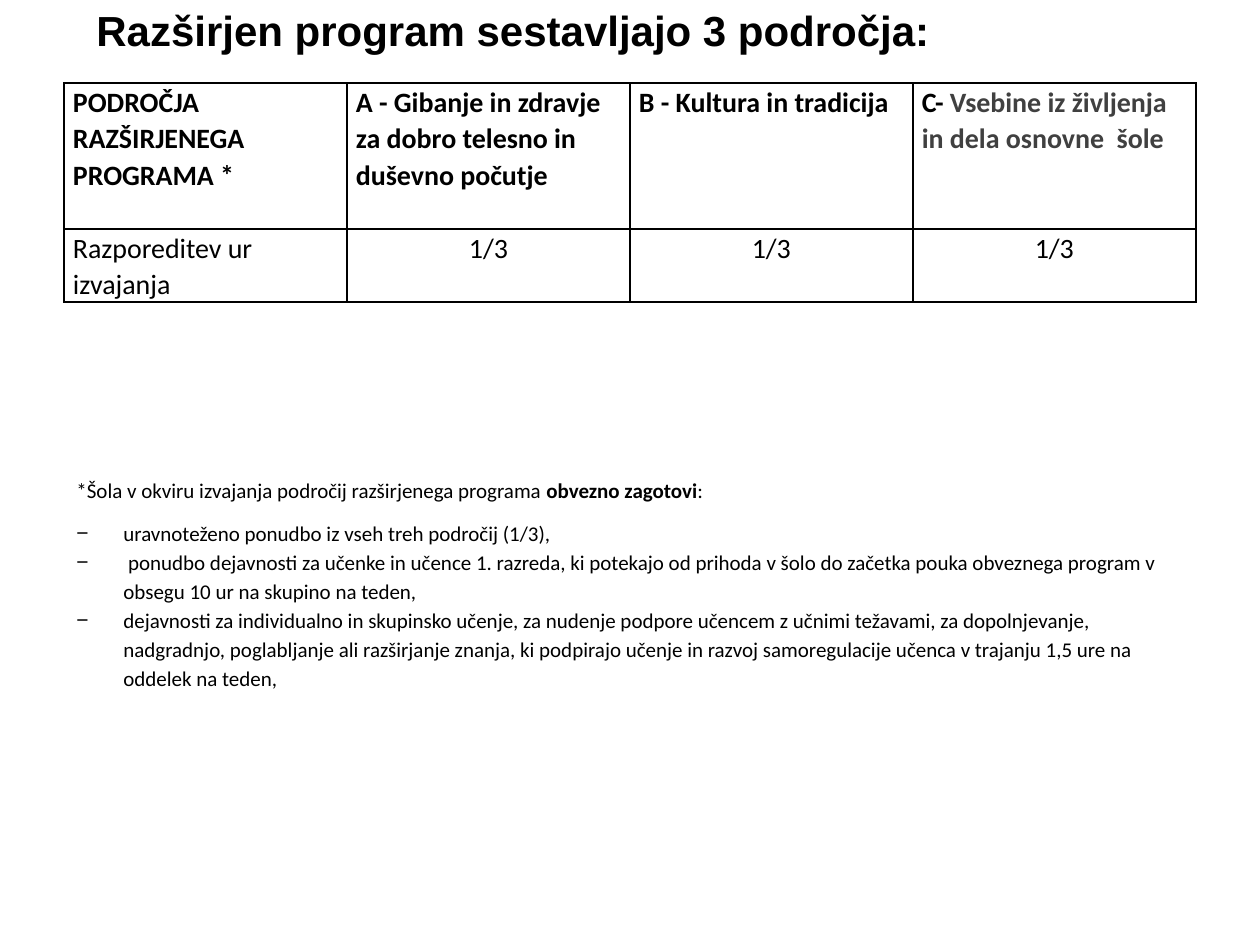
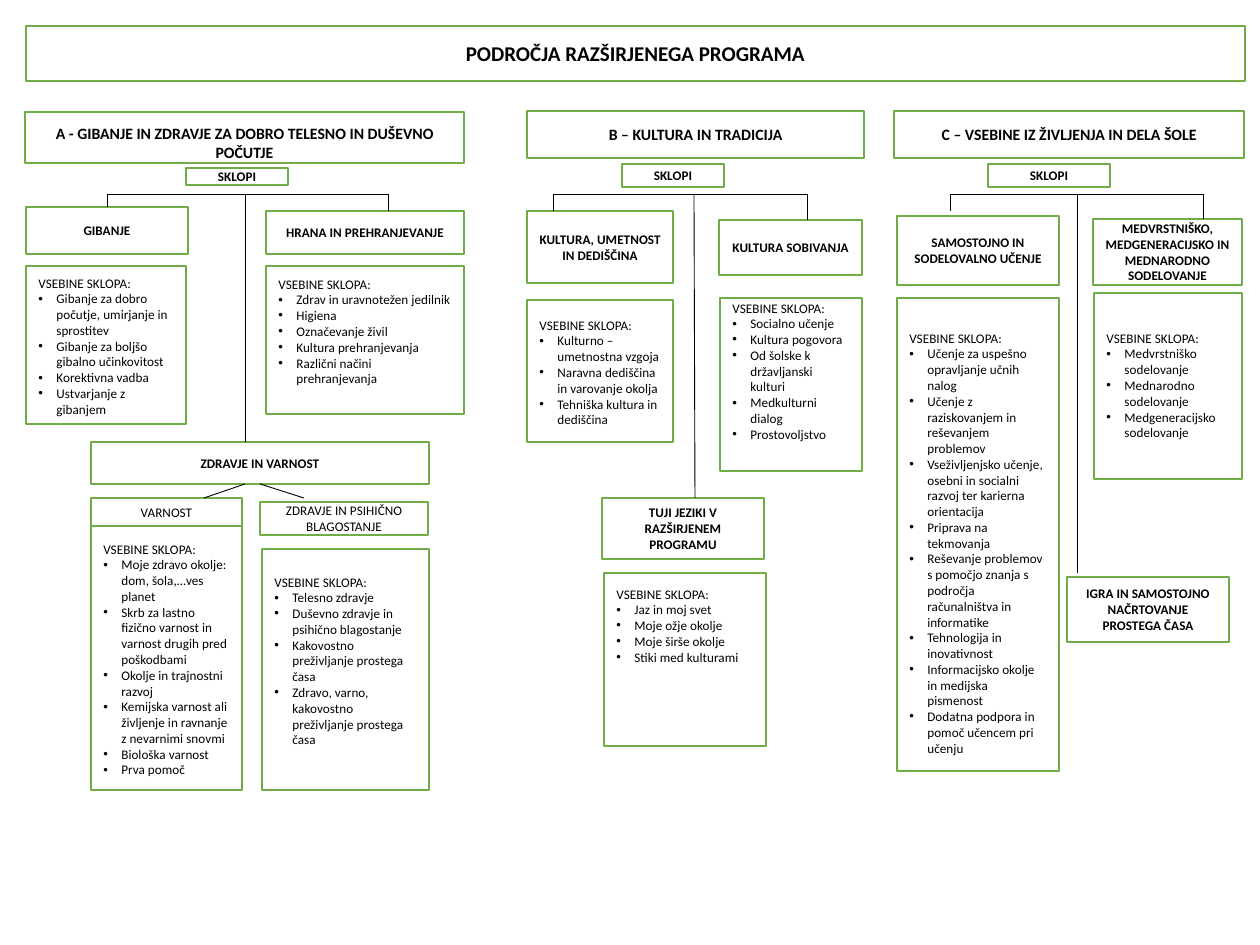
"""Builds two slides on the areas of the extended school programme."""
from lxml import etree
from pptx import Presentation
from pptx.dml.color import RGBColor
from pptx.enum.shapes import MSO_CONNECTOR, MSO_SHAPE
from pptx.enum.text import MSO_ANCHOR, PP_ALIGN
from pptx.oxml.ns import qn
from pptx.util import Emu, Pt

BLACK = RGBColor(0x00, 0x00, 0x00)
GREY = RGBColor(0x40, 0x40, 0x40)
WHITE = RGBColor(0xFF, 0xFF, 0xFF)
GREEN = RGBColor(0x70, 0xAD, 0x47)
PROCESS = MSO_SHAPE.FLOWCHART_PROCESS
STRAIGHT = MSO_CONNECTOR.STRAIGHT
CENTER, LEFT = PP_ALIGN.CENTER, PP_ALIGN.LEFT
MIDDLE, TOP = MSO_ANCHOR.MIDDLE, MSO_ANCHOR.TOP
TOP_SIDE, BOTTOM_SIDE = 0, 2
BODY_FONT, TITLE_FONT = "Calibri", "Arial"
SMALL = 7.5

TITLE = "Razširjen program sestavljajo 3 področja:"
TABLE_HEAD = [
    [("PODROČJA RAZŠIRJENEGA PROGRAMA *", True, BLACK)],
    [("A - Gibanje in zdravje za dobro telesno in duševno počutje", True, BLACK)],
    [("B - Kultura in tradicija", True, BLACK)],
    [("C- ", True, BLACK), ("Vsebine iz življenja in dela osnovne  šole", True, GREY)],
]
TABLE_SHARES = [[(text, False, BLACK)] for text in
                ("Razporeditev ur izvajanja", "1/3", "1/3", "1/3")]
TABLE_ROWS = [(146, TABLE_HEAD), (73, TABLE_SHARES)]
COLUMN_WIDTH = 283

DUTY_INTRO = [
    ("*Šola v okviru izvajanja področij razširjenega programa ", False, BLACK),
    ("obvezno zagotovi", True, BLACK),
    (":", False, BLACK),
]
DUTIES = [
    "uravnoteženo ponudbo iz vseh treh področij (1/3),",
    " ponudbo dejavnosti za učenke in učence 1. razreda, ki potekajo od prihoda v šolo "
    "do začetka pouka obveznega program v obsegu 10 ur na skupino na teden,",
    "dejavnosti za individualno in skupinsko učenje, za nudenje podpore učencem z učnimi "
    "težavami, za dopolnjevanje, nadgradnjo, poglabljanje ali razširjanje znanja, ki "
    "podpirajo učenje in razvoj samoregulacije učenca v trajanju 1,5 ure na oddelek na teden,",
]

HEADINGS = [
    ("PODROČJA RAZŠIRJENEGA PROGRAMA", (26, 26, 1219, 55), 12, 0),
    ("A - GIBANJE IN ZDRAVJE ZA DOBRO TELESNO IN DUŠEVNO POČUTJE", (25, 112, 439, 51), 9, 10),
    ("B – KULTURA IN TRADICIJA", (527, 111, 337, 47), 9, 0),
    ("C – VSEBINE IZ ŽIVLJENJA IN DELA ŠOLE", (894, 111, 350, 47), 9, 0),
    ("SKLOPI", (186, 168, 102, 17), SMALL, 0),
    ("SKLOPI", (622, 164, 102, 23), SMALL, 0),
    ("SKLOPI", (988, 164, 122, 23), SMALL, 0),
]
CLUSTERS = [
    ("GIBANJE", (26, 207, 162, 47), True),
    ("HRANA IN PREHRANJEVANJE", (266, 211, 198, 43), True),
    ("ZDRAVJE IN VARNOST", (91, 442, 338, 42), True),
    ("VARNOST", (91, 498, 151, 28), False),
    ("ZDRAVJE IN PSIHIČNO BLAGOSTANJE", (260, 502, 168, 33), False),
    ("KULTURA, UMETNOST IN DEDIŠČINA", (527, 211, 146, 72), True),
    ("KULTURA SOBIVANJA", (719, 220, 143, 55), True),
    ("TUJI JEZIKI V RAZŠIRJENEM PROGRAMU", (602, 498, 162, 61), True),
    ("SAMOSTOJNO IN SODELOVALNO UČENJE", (897, 216, 162, 69), True),
    ("MEDVRSTNIŠKO,\nMEDGENERACIJSKO IN MEDNARODNO SODELOVANJE", (1093, 219, 149, 66), True),
    ("IGRA IN SAMOSTOJNO NAČRTOVANJE PROSTEGA ČASA", (1067, 577, 162, 65), True),
]
CONTENTS_LABEL = "VSEBINE SKLOPA:"
CONTENTS = [
    ((26, 266, 160, 158), 9, [
        "Gibanje za dobro počutje, umirjanje in sprostitev",
        "Gibanje za boljšo gibalno učinkovitost",
        "Korektivna vadba", "Ustvarjanje z gibanjem"]),
    ((266, 266, 198, 148), 10, [
        "Zdrav in uravnotežen jedilnik", "Higiena", "Označevanje živil",
        "Kultura prehranjevanja", "Različni načini prehranjevanja"]),
    ((91, 526, 151, 264), 15, [
        "Moje zdravo okolje: dom, šola,…ves planet",
        "Skrb za lastno fizično varnost in varnost drugih pred poškodbami",
        "Okolje in trajnostni razvoj",
        "Kemijska varnost ali življenje in ravnanje z nevarnimi snovmi",
        "Biološka varnost", "Prva pomoč"]),
    ((262, 549, 167, 241), 25, [
        "Telesno zdravje", "Duševno zdravje in psihično blagostanje",
        "Kakovostno preživljanje prostega časa",
        "Zdravo, varno, kakovostno preživljanje prostega časa"]),
    ((527, 300, 146, 142), 17, [
        "Kulturno – umetnostna vzgoja", "Naravna dediščina in varovanje okolja",
        "Tehniška kultura in dediščina"]),
    ((720, 298, 142, 173), 2, [
        "Socialno učenje", "Kultura pogovora", "Od šolske k državljanski kulturi",
        "Medkulturni dialog", "Prostovoljstvo"]),
    ((604, 573, 162, 173), 13, [
        "Jaz in moj svet", "Moje ožje okolje", "Moje širše okolje", "Stiki med kulturami"]),
    ((897, 298, 162, 473), 32, [
        "Učenje za uspešno opravljanje učnih nalog",
        "Učenje z raziskovanjem in reševanjem problemov",
        "Vseživljenjsko učenje, osebni in socialni razvoj ter karierna orientacija",
        "Priprava na tekmovanja",
        "Reševanje problemov s pomočjo znanja s področja računalništva in informatike",
        "Tehnologija in inovativnost", "Informacijsko okolje in medijska pismenost",
        "Dodatna podpora in pomoč učencem pri učenju"]),
    ((1094, 293, 148, 186), 37, [
        "Medvrstniško sodelovanje", "Mednarodno sodelovanje",
        "Medgeneracijsko sodelovanje"]),
]
RAIL = 194
RAILS = [(107, 388), (553, 807), (950, 1203)]
DROPS = [(388, 388, 211), (245, 245, 442), (553, 553, 211), (694, 695, 498),
         (807, 807, 220), (950, 950, 211), (1077, 1077, 573), (1203, 1203, 219)]
BRANCH = (245, 484, 204, 498)
GIBANJE_DROP = (107, RAIL, 107, 207)
WELLBEING_BRANCH = (260, 484, 304, 498)


def px(length):
    return Emu(round(length * 914400 / 126))


def place(rect):
    return [px(length) for length in rect]


def style(span, size, bold, color, font=BODY_FONT):
    span.font.name = font
    span.font.size = Pt(size)
    span.font.bold = bold
    span.font.color.rgb = color


def add_spans(para, spans, size, font=BODY_FONT):
    for text, bold, color in spans:
        span = para.add_run()
        span.text = text
        style(span, size, bold, color, font)


def add_bullet(para, mark, indent):
    properties = para._p.get_or_add_pPr()
    properties.set("marL", str(px(indent)))
    properties.set("indent", str(-px(indent)))
    etree.SubElement(properties, qn("a:buFont")).set("typeface", TITLE_FONT)
    etree.SubElement(properties, qn("a:buChar")).set("char", mark)


def add_text_box(page, rect, anchor=TOP):
    frame = page.shapes.add_textbox(*place(rect)).text_frame
    frame.word_wrap = True
    frame.vertical_anchor = anchor
    return frame


def add_box(page, rect, text, size, bold, inset=0, align=CENTER, anchor=MIDDLE):
    box = page.shapes.add_shape(PROCESS, *place(rect))
    box.shadow.inherit = False
    box.fill.solid()
    box.fill.fore_color.rgb = WHITE
    box.line.color.rgb = GREEN
    box.line.width = Pt(1)
    frame = box.text_frame
    frame.word_wrap = True
    frame.vertical_anchor = anchor
    frame.margin_top, frame.margin_bottom = px(inset), 0
    frame.text = text
    for para in frame.paragraphs:
        para.alignment = align
        for span in para.runs:
            style(span, size, bold, BLACK)
    return box


def add_line(page, ends):
    line = page.shapes.add_connector(STRAIGHT, *place(ends))
    line.line.color.rgb = BLACK
    line.line.width = Pt(0.5)
    etree.SubElement(line._element.spPr, qn("a:effectLst"))
    return line


def add_borders(cell):
    properties = cell._tc.get_or_add_tcPr()
    for position, side in enumerate(("a:lnL", "a:lnR", "a:lnT", "a:lnB")):
        border = etree.Element(qn(side), w=str(Pt(1)))
        fill = etree.SubElement(border, qn("a:solidFill"))
        etree.SubElement(fill, qn("a:srgbClr")).set("val", str(BLACK))
        properties.insert(position, border)


def add_share_table(page):
    columns = len(TABLE_HEAD)
    height = sum(row_height for row_height, _ in TABLE_ROWS)
    table = page.shapes.add_table(
        len(TABLE_ROWS), columns, *place((64, 83, columns * COLUMN_WIDTH, height))).table
    table.first_row = table.horz_banding = False
    for row, (row_height, cells) in enumerate(TABLE_ROWS):
        table.rows[row].height = px(row_height)
        for column, spans in enumerate(cells):
            cell = table.cell(row, column)
            cell.fill.background()
            add_borders(cell)
            cell.margin_left = cell.margin_right = px(9)
            cell.margin_top = cell.margin_bottom = 0
            para = cell.text_frame.paragraphs[0]
            para.line_spacing = 1.07
            para.alignment = CENTER if row and column else LEFT
            add_spans(para, spans, 16)


def build_overview(page):
    title = add_text_box(page, (84, 1, 1153, 58), MIDDLE)
    add_spans(title.paragraphs[0], [(TITLE, True, BLACK)], 24, TITLE_FONT)
    add_share_table(page)
    frame = add_text_box(page, (64, 470, 1142, 229))
    intro = frame.paragraphs[0]
    intro.line_spacing = 1.07
    intro.space_after = Pt(8)
    add_spans(intro, DUTY_INTRO, 12)
    for duty in DUTIES:
        para = frame.add_paragraph()
        add_bullet(para, "−", 47)
        para.line_spacing = 1.15
        add_spans(para, [(duty, False, BLACK)], 12)


def build_chart(page):
    for text, rect, size, inset in HEADINGS:
        add_box(page, rect, text, size, True, inset)
    clusters = {text: add_box(page, rect, text, SMALL, bold) for text, rect, bold in CLUSTERS}
    for rect, inset, items in CONTENTS:
        text = "\n".join([CONTENTS_LABEL] + items)
        box = add_box(page, rect, text, SMALL, False, inset, LEFT, TOP)
        for para in box.text_frame.paragraphs[1:]:
            add_bullet(para, "•", 18)
    for start, end in RAILS:
        add_line(page, (start, RAIL, end, RAIL))
    for start, end, bottom in DROPS:
        add_line(page, (start, RAIL, end, bottom))
    add_line(page, BRANCH)
    add_line(page, GIBANJE_DROP).end_connect(clusters["GIBANJE"], TOP_SIDE)
    add_line(page, WELLBEING_BRANCH).begin_connect(clusters["ZDRAVJE IN VARNOST"], BOTTOM_SIDE)


def main():
    deck = Presentation()
    deck.slide_width, deck.slide_height = px(1260), px(945)
    blank = deck.slide_layouts[6]
    for build in (build_overview, build_chart):
        build(deck.slides.add_slide(blank))
    deck.save("out.pptx")


if __name__ == "__main__":
    main()
